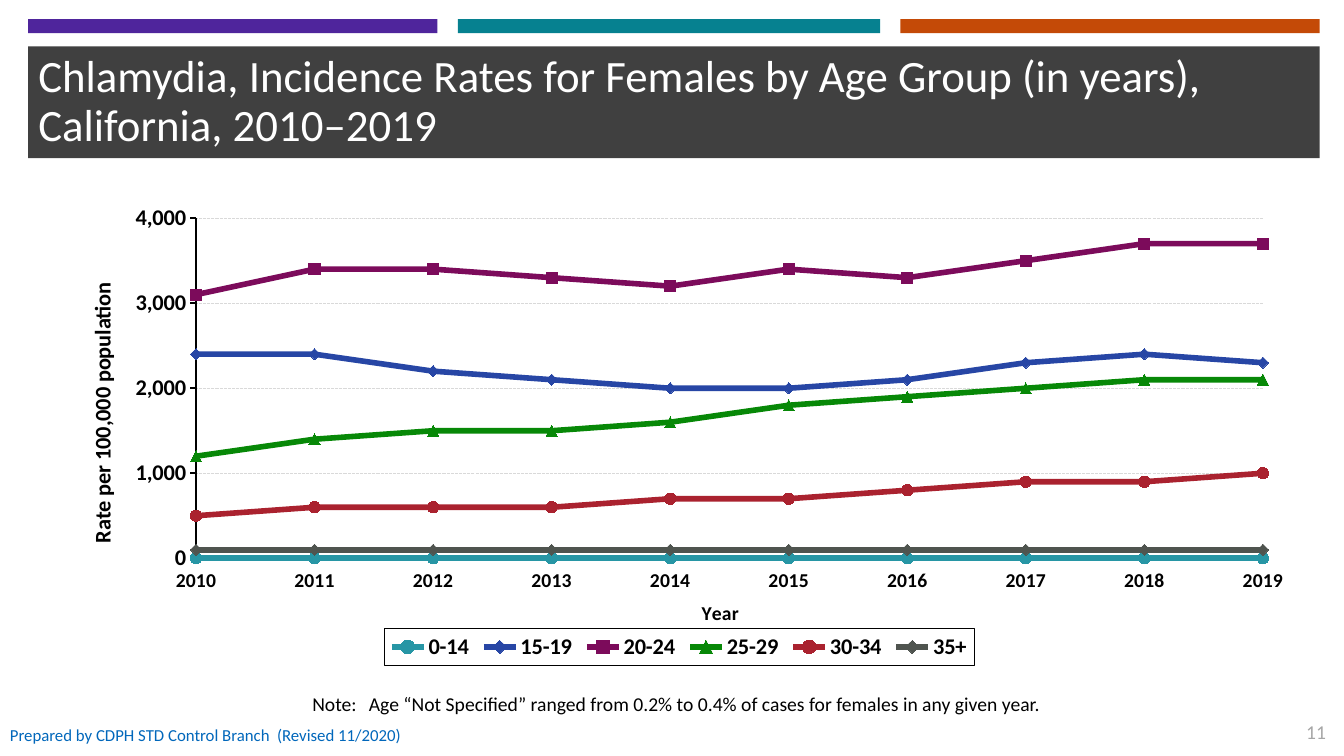
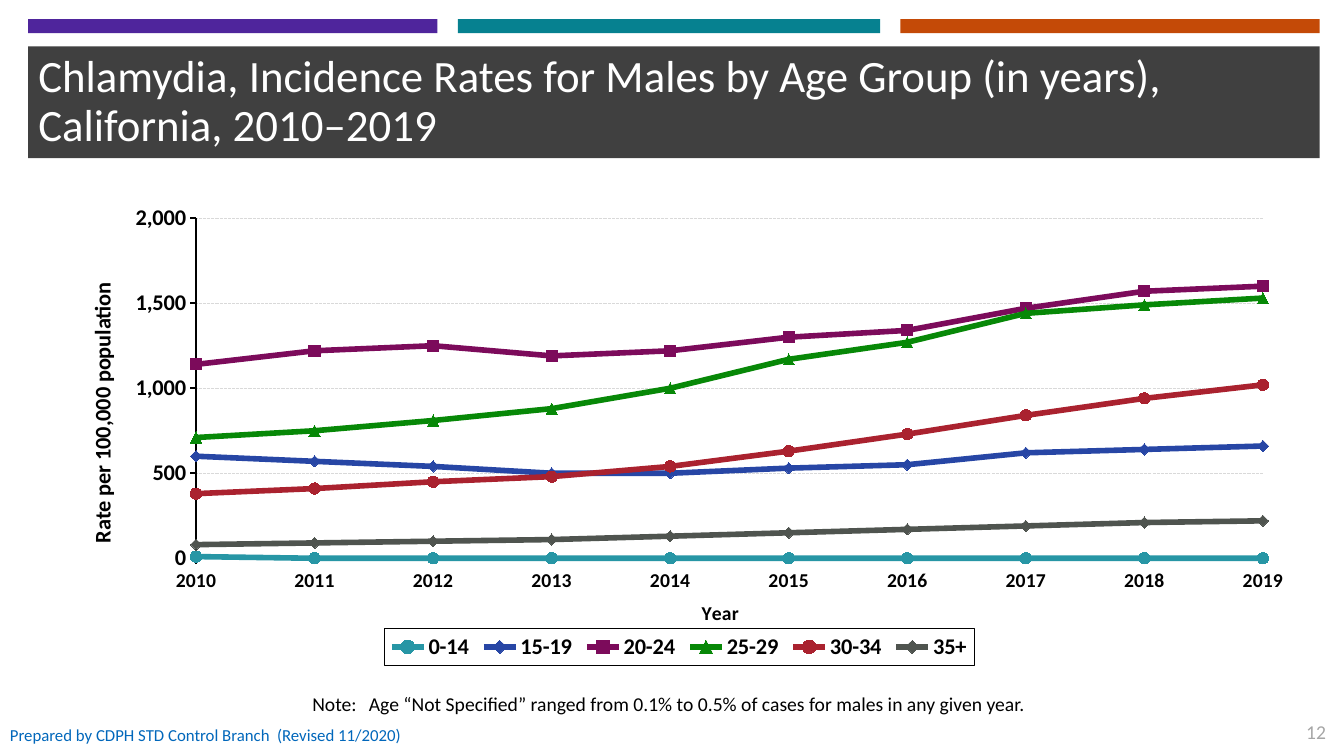
from pptx import Presentation
from pptx.chart.data import CategoryChartData
from pptx.dml.color import RGBColor
from pptx.enum.chart import XL_CHART_TYPE, XL_LEGEND_POSITION, XL_MARKER_STYLE as Marker, XL_TICK_MARK
from pptx.enum.dml import MSO_LINE
from pptx.enum.shapes import MSO_SHAPE
from pptx.enum.text import MSO_ANCHOR as Anchor, MSO_AUTO_SIZE, PP_ALIGN as Align
from pptx.oxml import parse_xml
from pptx.oxml.ns import nsdecls, qn
from pptx.util import Inches, Pt

BLACK, WHITE, BLUE = "000000", "FFFFFF", "0167BB"
BAND_BOX = (0.28, 0.46, 12.81, 1.11)
BANDS = [
    (BAND_BOX, "404040"),
    ((0.28, 0.19, 4.06, 0.14), "4F259C"),
    ((4.54, 0.19, 4.19, 0.14), "068190"),
    ((8.93, 0.19, 4.16, 0.14), "C44A07"),
]
YEARS = [str(year) for year in range(2010, 2020)]
AGE_GROUPS = [
    ("0-14", "2796A5", Marker.CIRCLE),
    ("15-19", "2746A5", Marker.DIAMOND),
    ("20-24", "7C0B5B", Marker.SQUARE),
    ("25-29", "078807", Marker.TRIANGLE),
    ("30-34", "AA222F", Marker.CIRCLE),
    ("35+", "4F544F", Marker.DIAMOND),
]
SLIDES = [
    {
        "number": 11, "sex": "Females", "unspecified": "0.2% to 0.4%", "maximum": 4000,
        "rates": [
            [0] * 10,
            [2400, 2400, 2200, 2100, 2000, 2000, 2100, 2300, 2400, 2300],
            [3100, 3400, 3400, 3300, 3200, 3400, 3300, 3500, 3700, 3700],
            [1200, 1400, 1500, 1500, 1600, 1800, 1900, 2000, 2100, 2100],
            [500, 600, 600, 600, 700, 700, 800, 900, 900, 1000],
            [100] * 10,
        ],
    },
    {
        "number": 12, "sex": "Males", "unspecified": "0.1% to 0.5%", "maximum": 2000,
        "rates": [
            [10] + [0] * 9,
            [600, 570, 540, 500, 500, 530, 550, 620, 640, 660],
            [1140, 1220, 1250, 1190, 1220, 1300, 1340, 1470, 1570, 1600],
            [710, 750, 810, 880, 1000, 1170, 1270, 1440, 1490, 1530],
            [380, 410, 450, 480, 540, 630, 730, 840, 940, 1020],
            [80, 90, 100, 110, 130, 150, 170, 190, 210, 220],
        ],
    },
]


def rgb(color):
    return RGBColor.from_string(color)


def add_text(slide, box, text, size, color, align=Align.LEFT, anchor=Anchor.TOP):
    shape = slide.shapes.add_textbox(*map(Inches, box))
    frame = shape.text_frame
    frame.word_wrap = True
    frame.vertical_anchor = anchor
    paragraph = frame.paragraphs[0]
    paragraph.text = text
    paragraph.alignment = align
    paragraph.font.name = "Calibri"
    paragraph.font.size = Pt(size)
    paragraph.font.color.rgb = rgb(color)
    return shape


presentation = Presentation()
presentation.slide_width = Inches(13.33)
presentation.slide_height = Inches(7.5)
layout = presentation.slide_layouts.get_by_name("Title Only")
layout_tree = layout.placeholders[0].element.getparent()
for placeholder in list(layout.placeholders)[1:]:
    layout_tree.remove(placeholder.element)

slides = [presentation.slides.add_slide(layout) for content in SLIDES]

shared_shapes = []
for box, color in BANDS:
    band = slides[0].shapes.add_shape(MSO_SHAPE.RECTANGLE, *map(Inches, box))
    band.shadow.inherit = False
    band.fill.solid()
    band.fill.fore_color.rgb = rgb(color)
    band.line.fill.background()
    shared_shapes.append(band)
shared_shapes.append(add_text(slides[0], (0, 7.09, 2.8, 0.4), "Prepared by CDPH STD Control Branch",
                              12, BLUE, anchor=Anchor.MIDDLE))
for shape in shared_shapes:
    layout_tree.append(shape.element)

for slide, content in zip(slides, SLIDES):
    title = slide.shapes.title
    title.left, title.top, title.width, title.height = map(Inches, BAND_BOX)
    title.text_frame.auto_size = MSO_AUTO_SIZE.NONE
    title.text_frame.vertical_anchor = Anchor.MIDDLE
    paragraph = title.text_frame.paragraphs[0]
    paragraph.text = f"Chlamydia, Incidence Rates for {content['sex']} by Age Group (in years), California, 2010–2019"
    paragraph.alignment = Align.LEFT
    paragraph.line_spacing = 0.9
    paragraph.font.name = "Calibri"
    paragraph.font.size = Pt(32)
    paragraph.font.color.rgb = rgb(WHITE)

    chart_data = CategoryChartData(number_format="#,##0")
    chart_data.categories = YEARS
    for (name, color, marker), rates in zip(AGE_GROUPS, content["rates"]):
        chart_data.add_series(name, rates)
    chart = slide.shapes.add_chart(XL_CHART_TYPE.LINE_MARKERS, *map(Inches, (0.45, 1.98, 12.45, 4.63)),
                                   chart_data).chart
    chart.has_title = False
    chart.font.name = "Times New Roman"
    chart.font.size = Pt(20)
    chart.font.bold = True
    chart.font.color.rgb = rgb(BLACK)
    chart.plots[0].vary_by_categories = False
    for series, (name, color, marker) in zip(chart.plots[0].series, AGE_GROUPS):
        series.smooth = False
        series.format.line.width = Pt(4)
        series.format.line.color.rgb = rgb(color)
        series.marker.style = marker
        series.marker.size = 8
        series.marker.format.fill.solid()
        series.marker.format.fill.fore_color.rgb = rgb(color)
        series.marker.format.line.color.rgb = rgb(color)

    chart.has_legend = True
    chart.legend.position = XL_LEGEND_POSITION.BOTTOM
    chart.legend.include_in_layout = False
    fonts = [(chart.legend.font, 16)]
    for axis, text, size in [(chart.category_axis, "Year", 14),
                             (chart.value_axis, "Rate per 100,000 population", 16)]:
        axis.major_tick_mark = XL_TICK_MARK.OUTSIDE
        axis.minor_tick_mark = XL_TICK_MARK.NONE
        axis.format.line.width = Pt(1.1)
        axis.format.line.color.rgb = rgb(BLACK)
        paragraph = axis.axis_title.text_frame.paragraphs[0]
        paragraph.text = text
        fonts += [(axis.tick_labels.font, size), (paragraph.font, size), (paragraph.runs[0].font, size)]
    for font, size in fonts:
        font.name = "Calibri"
        font.size = Pt(size)
        font.bold = True
        font.color.rgb = rgb(BLACK)

    value_axis = chart.value_axis
    value_axis.minimum_scale = 0
    value_axis.maximum_scale = content["maximum"]
    value_axis.major_unit = content["maximum"] / 4
    value_axis.tick_labels.number_format = "#,##0"
    value_axis.tick_labels.number_format_is_linked = False
    gridline = value_axis.major_gridlines.format.line
    gridline.width = Pt(0.75)
    gridline.color.rgb = rgb("D9D9D9")
    gridline.dash_style = MSO_LINE.SQUARE_DOT

    chart_space = chart.element
    chart_space.xpath(".//c:valAx/c:crosses")[0].addnext(
        parse_xml(f'<c:crossBetween {nsdecls("c")} val="midCat"/>'))
    for query, position, target, sizes in [
        ("c:plotArea", 0, '<c:layoutTarget val="inner"/>', {"x": 0.12, "y": 0.04, "w": 0.85, "h": 0.73}),
        ("c:legend", 1, "", {"x": 0.27, "y": 0.92, "w": 0.47, "h": 0.08}),
        ("c:plotArea/c:catAx/c:title", 1, "", {"x": 0.52, "y": 0.85}),
        ("c:plotArea/c:valAx/c:title", 1, "", {"x": 0.03, "y": 0.17}),
    ]:
        parent = chart_space.xpath(f"c:chart/{query}")[0]
        for automatic in parent.findall(qn("c:layout")):
            parent.remove(automatic)
        modes = "".join(f'<c:{key}Mode val="edge"/>' for key in "xy")
        values = "".join(f'<c:{key} val="{value}"/>' for key, value in sizes.items())
        parent.insert(position, parse_xml(
            f'<c:layout {nsdecls("c")}><c:manualLayout>{target}{modes}{values}</c:manualLayout></c:layout>'))

    white_fill = f'<a:solidFill><a:srgbClr val="{WHITE}"/></a:solidFill>'
    no_line = "<a:ln><a:noFill/></a:ln>"
    black_line = f'<a:ln w="12700"><a:solidFill><a:srgbClr val="{BLACK}"/></a:solidFill></a:ln>'
    for query, line in [("c:chart", no_line), ("c:chart/c:plotArea/*[last()]", no_line),
                        ("c:chart/c:legend/c:overlay", black_line)]:
        chart_space.xpath(query)[0].addnext(
            parse_xml(f'<c:spPr {nsdecls("c", "a")}>{white_fill}{line}</c:spPr>'))

    note = add_text(slide, (2.75, 6.82, 7.92, 0.34),
                    f"\tNote:\tAge “Not Specified” ranged from {content['unspecified']} of cases "
                    f"for {content['sex'].lower()} in any given year.", 14, BLACK)
    tabs = "".join(f'<a:tab pos="{Inches(stop)}" algn="{side}"/>' for stop, side in [(0.69, "r"), (0.81, "l")])
    note.element.xpath(".//a:pPr")[0].insert(0, parse_xml(f'<a:tabLst {nsdecls("a")}>{tabs}</a:tabLst>'))
    add_text(slide, (2.65, 7.09, 1.5, 0.4), "(Revised 11/2020)", 12, BLUE, anchor=Anchor.MIDDLE)
    add_text(slide, (12.82, 7.09, 0.43, 0.34), str(content["number"]), 14, "A6A6A6", align=Align.RIGHT)

presentation.save("out.pptx")
